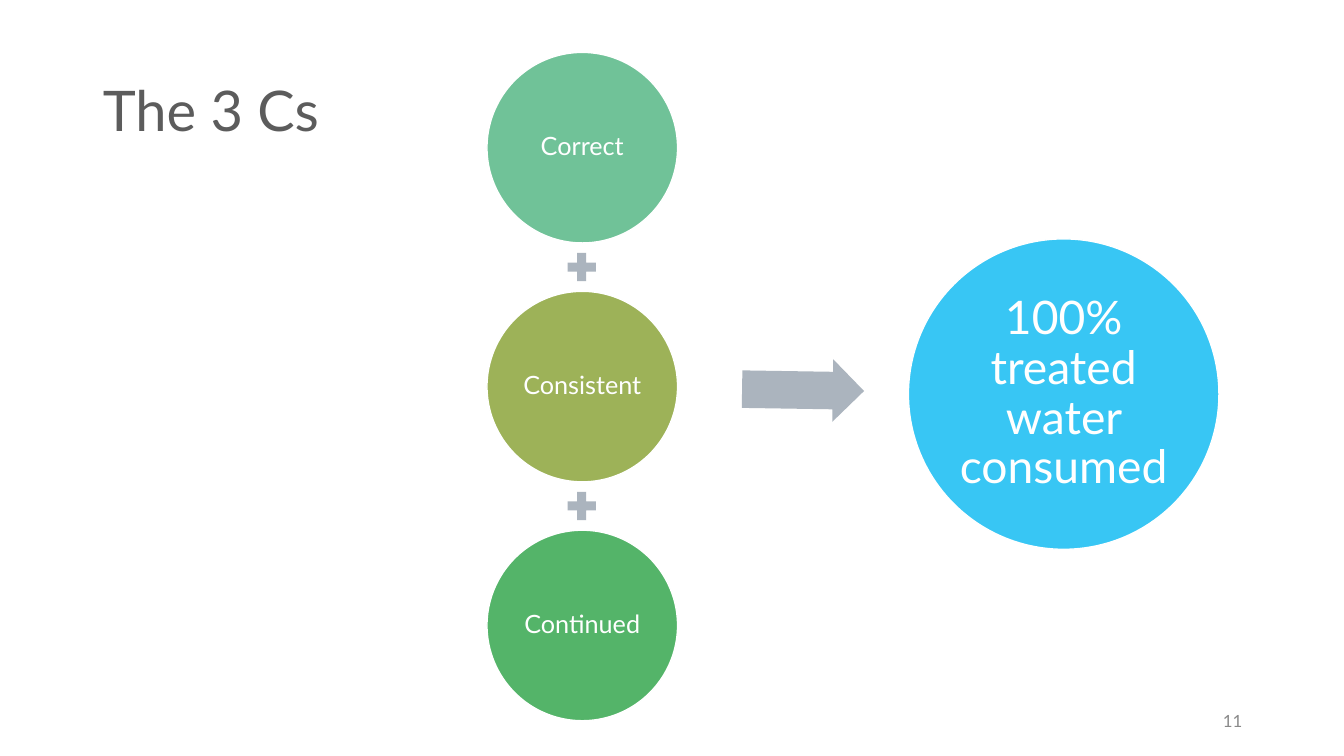
from pptx import Presentation
from pptx import util as u
from pptx.dml.color import RGBColor
from pptx.enum import shapes, text

PX = 9144
HUES = {
    "ink": "5C5C5C", "note": "898989", "white": "FFFFFF", "grey": "ABB4BE",
    "mint": "70C298", "olive": "9DB258", "green": "54B469", "sky": "38C6F4",
}
KIND = shapes.MSO_SHAPE
ALIGN = text.PP_ALIGN


class Deck:
    font = "Lato"

    def __init__(self, wide, high):
        self.prs = Presentation()
        self.prs.slide_width, self.prs.slide_height = wide * PX, high * PX
        self.slide = self.prs.slides.add_slide(self.prs.slide_layouts[5])

    def hue(self, name):
        return RGBColor.from_string(HUES[name])

    def letter(self, shape, words, size, hue, align, inset=None, lead=0.9):
        frame = shape.text_frame
        frame.word_wrap = True
        frame.auto_size = text.MSO_AUTO_SIZE.NONE
        frame.vertical_anchor = text.MSO_ANCHOR.MIDDLE
        if inset is not None:
            frame.margin_left = frame.margin_right = inset * PX
            frame.margin_top = frame.margin_bottom = inset * PX
        frame.text = words
        para = frame.paragraphs[0]
        para.alignment = align
        para.line_spacing = lead
        para.font.name = self.font
        para.font.size = u.Pt(size)
        para.font.color.rgb = self.hue(hue)

    def title(self, words, *box):
        shape = self.slide.shapes.title
        shape.left, shape.top, shape.width, shape.height = (n * PX for n in box)
        self.letter(shape, words, 40, "ink", ALIGN.LEFT)

    def label(self, words, *box):
        shape = self.slide.shapes.add_textbox(*(n * PX for n in box))
        self.letter(shape, words, 12, "note", ALIGN.RIGHT, lead=1.0)

    def shape(self, kind, hue, *box):
        shape = self.slide.shapes.add_shape(kind, *(n * PX for n in box))
        shape.shadow.inherit = False
        shape.fill.solid()
        shape.fill.fore_color.rgb = self.hue(hue)
        shape.line.fill.background()
        return shape

    def disc(self, words, hue, left, top, side, size, inset):
        shape = self.shape(KIND.OVAL, hue, left, top, side, side)
        shape.line.color.rgb = self.hue("white")
        shape.line.width = u.Pt(1)
        self.letter(shape, words, size, "white", ALIGN.CENTER, inset)

    def plus(self, left, top, side):
        self.shape(KIND.MATH_PLUS, "grey", left, top, side, side)

    def arrow(self, turn, *box):
        shape = self.shape(KIND.RIGHT_ARROW, "grey", *box)
        shape.adjustments[0] = 0.6
        shape.adjustments[1] = 0.5
        shape.rotation = turn


def main():
    deck = Deck(1333, 750)
    deck.title("The 3 Cs", 92, 40, 1150, 145)
    deck.label("11", 942, 695, 300, 40)

    left, top, side, step, mark = 483, 52, 189, 237, 38
    steps = [("Correct", "mint"), ("Consistent", "olive"), ("Continued", "green")]
    for i, (words, hue) in enumerate(steps):
        y = top + i * step
        if i:
            deck.plus(left + (side - mark) // 2, y - (step - side + mark) // 2, mark)
        deck.disc(words, hue, left, y, side, 18, 0)

    deck.arrow(0.9, 736, 356, 121, 62)
    deck.disc("100% treated water consumed", "sky", 901, 237, 308, 33, 5)
    deck.prs.save("out.pptx")


if __name__ == "__main__":
    main()
